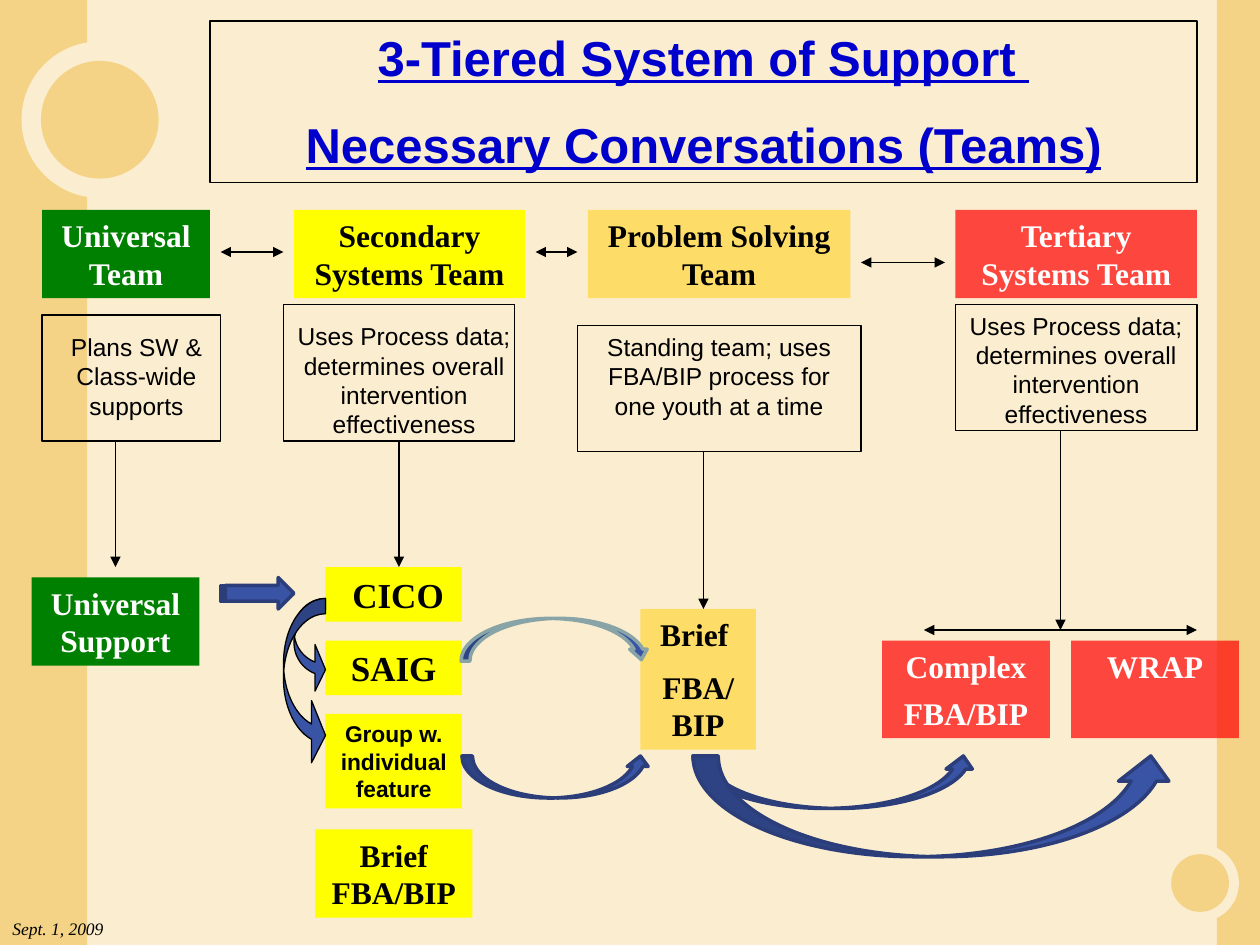
from lxml.etree import SubElement
from pptx import Presentation
from pptx.dml.color import RGBColor
from pptx.enum.shapes import MSO_CONNECTOR, MSO_SHAPE
from pptx.enum.text import MSO_ANCHOR, MSO_AUTO_SIZE, PP_ALIGN
from pptx.oxml.ns import qn
from pptx.util import Inches, Pt

CREAM = RGBColor(0xFB, 0xED, 0xCF)
SAND = RGBColor(0xF4, 0xD3, 0x87)
BLACK = RGBColor(0, 0, 0)
WHITE = RGBColor(0xFF, 0xFF, 0xFF)
TITLE_BLUE = RGBColor(0, 0, 0xCC)
GREEN = RGBColor(0, 0x80, 0)
YELLOW = RGBColor(0xFF, 0xFF, 0)
GOLD = RGBColor(0xFF, 0xCC, 0)
RED = RGBColor(0xFF, 0, 0)
ARROW_BLUE = RGBColor(0x3A, 0x54, 0xA5)
NAVY = RGBColor(0x2B, 0x3E, 0x7A)
GREY_BLUE = RGBColor(0x89, 0xA4, 0xA7)
SANS, SERIF = "Arial", "Times New Roman"
LINE_HEIGHT = 1.15

# All places are columns and rows of a grid with 12 cells to the inch
COLUMNS, ROWS = 120, 90

TITLE = ["3-Tiered System of Support ", "Necessary Conversations (Teams)"]
TITLE_BOX = (20, 2, 94, 15.4)

BANDS = [(115.9, 0, 4.1, ROWS), (0, 0, 8.3, ROWS)]
RINGS = [  # centre column, centre row, outer and inner diameter
    (9.5, 11.4, 14.9, 11.2),
    (114.3, 84.1, 7.4, 5.5),
]

STYLES = {  # fill, opacity in percent, text colour
    "universal": (GREEN, 100, WHITE),
    "secondary": (YELLOW, 100, BLACK),
    "problem": (GOLD, 50, BLACK),
    "tertiary": (RED, 70, WHITE),
}
TEAM_ROW, TEAM_HEIGHT = 20, 8.4
TEAMS = [  # text, style, column, width
    ("Universal\vTeam", "universal", 4, 16),
    ("Secondary Systems Team", "secondary", 28, 22),
    ("Problem Solving Team", "problem", 56, 25),
    ("Tertiary Systems Team", "tertiary", 91, 23),
]
PROCESS_DATA = "Uses Process data; determines overall intervention effectiveness"
DUTIES = [  # text, text box, frame
    ("Plans SW & Class-wide supports", (5, 31, 16, 9.7), (4, 30, 17, 12)),
    (PROCESS_DATA, (27, 30, 23, 12.5), (27, 29, 22, 13)),
    ("Standing team; uses FBA/BIP process for one youth at a time",
     (56, 31, 25, 9.7), (55, 31, 27, 12)),
    (PROCESS_DATA, (91, 29, 23, 12.5), (91, 29, 23, 12)),
]
SUPPORTS = [  # paragraphs, style, box, size, font, space before in lines
    (["Universal Support"], "universal", (3, 55, 16, 8.4), 18, SERIF, 0),
    ([" CICO"], "secondary", (31, 54, 13, 5.2), 20, SERIF, 0),
    (["SAIG"], "secondary", (31, 61, 13, 5.2), 20, SERIF, 0),
    (["Group w. individual", "feature"], "secondary", (31, 68, 13, 9), 13, SANS, 0),
    (["Brief FBA/BIP"], "secondary", (30, 79, 15, 8.4), 18, SERIF, 0),
    (["Brief ", "FBA/BIP"], "problem", (61, 58, 11, 13.4), 18, SERIF, 0.4),
    (["Complex", "FBA/BIP"], "tertiary", (84, 61, 16, 9.3), 18, SERIF, 0.25),
    (["WRAP"], "tertiary", (102, 61, 16, 9.3), 18, SERIF, 0),
]
DOWN_ARROWS = [(11, 42, 54), (38, 42, 54), (67, 43, 58), (101, 41, 60)]  # column, rows
DOUBLE_ARROWS = [(24, 21, 27), (24, 51, 55), (25, 82, 90), (60, 88, 114)]  # row, columns

HOOK = [0.363, 1.482, 0.333]
BLOCK_ARROWS = [  # kind, box, adjustments, line colour, line width
    (MSO_SHAPE.CURVED_RIGHT_ARROW, (28, 57, 3, 9), HOOK, BLACK, 0.75),
    (MSO_SHAPE.CURVED_RIGHT_ARROW, (27, 57, 4, 16), HOOK, BLACK, 0.75),
    (MSO_SHAPE.STRIPED_RIGHT_ARROW, (21, 55, 7, 3), [], NAVY, 2),
    (MSO_SHAPE.CURVED_UP_ARROW, (66, 72, 27, 5), [], NAVY, 2),
    (MSO_SHAPE.CURVED_UP_ARROW, (66, 72, 46, 9.6), [], NAVY, 2),
    (MSO_SHAPE.CURVED_UP_ARROW, (44, 72, 18, 4), [], NAVY, 2),
]
RETURN_ARROW = (MSO_SHAPE.CURVED_UP_ARROW, (43.9, 58.9, 18, 4),
                [0.208, 0.417, 0.25], GREY_BLUE, 2)
DATE, DATE_BOX = "Sept. 1, 2009", (0, 86.8, 14, 3.2)


def cells(*counts):
    return [Inches(count / 12) for count in counts]


def add_shape(slide, kind, box, fill=None, opacity=100, line=None, width=0.75):
    shape = slide.shapes.add_shape(kind, *cells(*box))
    shape.shadow.inherit = False
    if fill is None:
        shape.fill.background()
    else:
        shape.fill.solid()
        shape.fill.fore_color.rgb = fill
        if opacity < 100:
            color = shape.fill._xPr.find(qn("a:solidFill"))[0]
            SubElement(color, qn("a:alpha"), val=str(opacity * 1000))
    if line is None:
        shape.line.fill.background()
    else:
        shape.line.color.rgb = line
        shape.line.width = Pt(width)
    return shape


def write(shape, paragraphs, size, font, color, space=0,
          align=PP_ALIGN.CENTER, **emphasis):
    frame = shape.text_frame
    frame.word_wrap = True
    frame.auto_size = MSO_AUTO_SIZE.NONE
    frame.vertical_anchor = MSO_ANCHOR.TOP
    frame.text = "\n".join(paragraphs)
    for index, paragraph in enumerate(frame.paragraphs):
        paragraph.alignment = align
        paragraph.space_before = Pt(round(size * LINE_HEIGHT * space, 1) if index else 0)
        paragraph.font.size = Pt(size)
        paragraph.font.name = font
        paragraph.font.color.rgb = color
        for name, value in emphasis.items():
            setattr(paragraph.font, name, value)


def add_text(slide, box, text, size, font, **options):
    write(slide.shapes.add_textbox(*cells(*box)), [text], size, font, BLACK, **options)


def add_label(slide, paragraphs, style, box, size=18, font=SERIF, space=0):
    fill, opacity, color = STYLES[style]
    shape = add_shape(slide, MSO_SHAPE.RECTANGLE, box, fill, opacity)
    write(shape, paragraphs, size, font, color, space, bold=True)


def add_arrow(slide, start, end, double=False):
    connector = slide.shapes.add_connector(
        MSO_CONNECTOR.STRAIGHT, *cells(*start, *end))
    connector.line.color.rgb = BLACK
    connector.line.width = Pt(0.75)
    line = connector.line._get_or_add_ln()
    for tag in ["a:headEnd", "a:tailEnd"] if double else ["a:tailEnd"]:
        SubElement(line, qn(tag), type="triangle")
    SubElement(connector._element.spPr, qn("a:effectLst"))


def add_block_arrow(slide, kind, box, adjustments, line, width):
    shape = add_shape(slide, kind, box, ARROW_BLUE, line=line, width=width)
    for index, value in enumerate(adjustments):
        shape.adjustments[index] = value
    return shape


def main():
    presentation = Presentation()
    presentation.slide_width, presentation.slide_height = cells(COLUMNS, ROWS)
    slide = presentation.slides.add_slide(presentation.slide_layouts[5])

    # Background bands and rings
    slide.background.fill.solid()
    slide.background.fill.fore_color.rgb = CREAM
    for band in BANDS:
        add_shape(slide, MSO_SHAPE.RECTANGLE, band, SAND)
    for column, row, *diameters in RINGS:
        for diameter, color in zip(diameters, (CREAM, SAND)):
            box = (column - diameter / 2, row - diameter / 2, diameter, diameter)
            add_shape(slide, MSO_SHAPE.OVAL, box, color)

    # Title
    title = slide.shapes.title
    title.left, title.top, title.width, title.height = cells(*TITLE_BOX)
    title.line.color.rgb = BLACK
    title.line.width = Pt(0.75)
    write(title, TITLE, 28, SANS, TITLE_BLUE, 0.5, bold=True, underline=True)

    # Teams, their duties and their supports
    for text, style, column, width in TEAMS:
        add_label(slide, [text], style, (column, TEAM_ROW, width, TEAM_HEIGHT))
    for text, box, frame in DUTIES:
        add_text(slide, box, text, 14, SANS)
        add_shape(slide, MSO_SHAPE.RECTANGLE, frame, line=BLACK)
    for support in SUPPORTS:
        add_label(slide, *support)

    # Thin arrows
    for column, top, bottom in DOWN_ARROWS:
        add_arrow(slide, (column, top), (column, bottom))
    for row, left, right in DOUBLE_ARROWS:
        add_arrow(slide, (left, row), (right, row), double=True)

    # Block arrows
    for arrow in BLOCK_ARROWS:
        add_block_arrow(slide, *arrow)
    return_arrow = add_block_arrow(slide, *RETURN_ARROW)
    return_arrow.rotation = 359.5
    return_arrow._element.spPr.xfrm.set("flipV", "1")

    # Date
    add_text(slide, DATE_BOX, DATE, 10, SERIF, align=PP_ALIGN.LEFT, italic=True)
    presentation.save("out.pptx")


if __name__ == "__main__":
    main()
